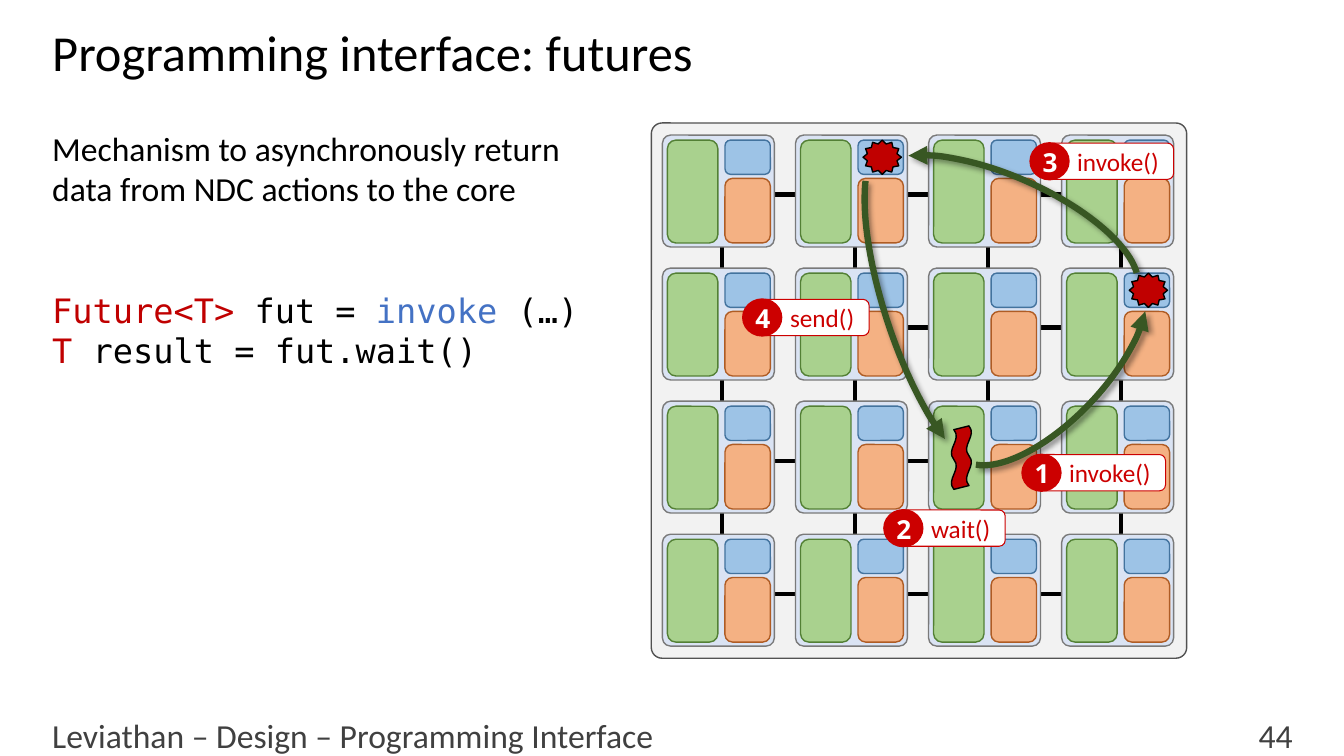
from dataclasses import dataclass
from typing import NamedTuple

from lxml import etree
from pptx import Presentation
from pptx.dml.color import RGBColor
from pptx.enum.shapes import MSO_CONNECTOR, MSO_SHAPE
from pptx.enum.text import MSO_ANCHOR, PP_ALIGN
from pptx.oxml.ns import qn
from pptx.util import Inches, Pt

ROUNDED = MSO_SHAPE.ROUNDED_RECTANGLE
OVAL = MSO_SHAPE.OVAL
ARC = MSO_SHAPE.ARC
STAR = MSO_SHAPE.STAR_12_POINT
WAVE = MSO_SHAPE.DOUBLE_WAVE
STRAIGHT = MSO_CONNECTOR.STRAIGHT
LEFT, CENTER, RIGHT = PP_ALIGN.LEFT, PP_ALIGN.CENTER, PP_ALIGN.RIGHT
TOP, MIDDLE = MSO_ANCHOR.TOP, MSO_ANCHOR.MIDDLE

COLORS = {
    "black": "000000", "white": "FFFFFF", "gray": "404040",
    "panel": "F2F2F2", "panel_line": "525252",
    "tile": "DAE3F3", "tile_line": "7A7A7A",
    "orange": "F4B183", "orange_line": "AF5C24",
    "green": "A9D18E", "green_line": "538035",
    "light_blue": "9DC3E6", "light_blue_line": "43739E",
    "arrow": "385723", "red": "C00000", "callout": "CC0000", "blue": "4472C4",
}
BODY_FONT, CODE_FONT, BADGE_FONT = "Calibri", "DejaVu Sans Mono", "Open Sans"
GRID_SIZE = 4
PITCH = 1.32
TILE_LEFT, TILE_TOP = 6.57, 1.34
INSET = 0.13


class Box(NamedTuple):
    left: float
    top: float
    width: float
    height: float

    def moved(self, across: float, down: float) -> "Box":
        return Box(self.left + across, self.top + down, self.width, self.height)

    def lengths(self) -> list:
        return [Inches(value) for value in self]


class Run(NamedTuple):
    text: str
    color: str = "black"


@dataclass
class Style:
    size: float
    color: str = "black"
    font: str = BODY_FONT
    bold: bool = False
    align: PP_ALIGN = LEFT


@dataclass
class Part:
    box: Box
    fill: str
    line: str
    adjustments: tuple = ()
    kind: MSO_SHAPE = ROUNDED
    rotation: float = 0


@dataclass
class Arrow:
    box: Box
    rotation: float
    start: float
    end: float


@dataclass
class Callout:
    number: str
    label: str
    left: float
    top: float
    width: float


TILE_PARTS = [
    Part(Box(0, 0, 1.11, 1.11), "tile", "tile_line", (0.073,)),
    Part(Box(0.62, 0.43, 0.45, 0.64), "orange", "orange_line"),
    Part(Box(0.05, 0.05, 0.5, 1.02), "green", "green_line"),
    Part(Box(0.62, 0.05, 0.45, 0.34), "light_blue", "light_blue_line"),
]
ARROWS = [
    Arrow(Box(9.85, 2.33, 1.12, 2.56), 43.4, 172.73, 49.65),
    Arrow(Box(9.39, 0.88, 1.13, 2.87), 293.8, 171.26, 49.65),
    Arrow(Box(8.78, 1.34, 1.05, 3.4), 161.7, 171.26, 46.94),
]
CALLOUTS = [
    Callout("2", "wait()", 8.94, 5.06, 1.03),
    Callout("1", "invoke()", 10.31, 4.51, 1.25),
    Callout("3", "invoke()", 10.39, 1.42, 1.25),
    Callout("4", "send()", 7.54, 2.97, 1.08),
]
MARKERS = [
    Part(Box(11.2, 2.71, 0.38, 0.34), "red", "black", (0.4,), STAR),
    Part(Box(8.56, 1.39, 0.38, 0.34), "red", "black", (0.4,), STAR),
    Part(Box(9.22, 4.44, 0.63, 0.2), "red", "black", (0.125, 0.03), WAVE, 90),
]


def rgb(name: str) -> RGBColor:
    return RGBColor.from_string(COLORS[name])


def write_paragraph(paragraph, runs: list, style: Style) -> None:
    paragraph.alignment = style.align
    paragraph.font.name = style.font
    paragraph.font.size = Pt(style.size)
    paragraph.font.bold = style.bold
    if len(runs) == 1:
        paragraph.font.color.rgb = rgb(style.color)
    for part in runs:
        run = paragraph.add_run()
        run.text = part.text
        if len(runs) > 1:
            run.font.color.rgb = rgb(part.color)


def set_insets(frame, inset: float) -> None:
    frame.margin_left = frame.margin_right = Inches(inset)
    frame.margin_top = frame.margin_bottom = Inches(inset)


def add_text(shapes, box: Box, text: str, style: Style, anchor: MSO_ANCHOR = MIDDLE):
    frame = shapes.add_textbox(*box.lengths()).text_frame
    frame.word_wrap = True
    frame.vertical_anchor = anchor
    write_paragraph(frame.paragraphs[0], [Run(text)], style)
    return frame


def add_part(shapes, part: Part, across: float = 0, down: float = 0, width: float = 1):
    shape = shapes.add_shape(part.kind, *part.box.moved(across, down).lengths())
    shape.shadow.inherit = False
    shape.rotation = part.rotation
    for index, value in enumerate(part.adjustments):
        shape.adjustments[index] = value
    shape.fill.solid()
    shape.fill.fore_color.rgb = rgb(part.fill)
    shape.line.color.rgb = rgb(part.line)
    shape.line.width = Pt(width)
    return shape


def add_link(shapes, left: float, top: float, right: float, bottom: float) -> None:
    link = shapes.add_connector(STRAIGHT, *map(Inches, (left, top, right, bottom)))
    link.line.color.rgb = rgb("black")
    link.line.width = Pt(3)
    etree.SubElement(link._element.spPr, qn("a:effectLst"))


def add_mesh(shapes) -> None:
    add_part(shapes, Part(Box(6.46, 1.22, 5.31, 5.31), "panel", "panel_line", (0.02,)))
    steps = [index * PITCH for index in range(GRID_SIZE)]
    for step in steps:
        add_link(shapes, 7.16 + step, 1.77, 7.16 + step, 6.17)
    for step in steps:
        add_link(shapes, 7.05, 1.93 + step, 11.39, 1.93 + step)
    for down in steps:
        for across in steps:
            for part in TILE_PARTS:
                add_part(shapes, part, TILE_LEFT + across, TILE_TOP + down)


def add_arrow(shapes, arrow: Arrow) -> None:
    shape = shapes.add_shape(ARC, *arrow.box.lengths())
    shape.rotation = arrow.rotation
    shape.adjustments[0] = arrow.start
    shape.adjustments[1] = arrow.end
    shape.fill.background()
    shape.line.color.rgb = rgb("arrow")
    shape.line.width = Pt(4.5)
    etree.SubElement(shape.line._get_or_add_ln(), qn("a:headEnd"), type="triangle")
    shape.shadow.inherit = False
    effects = shape._element.spPr.find(qn("a:effectLst"))
    shadow = etree.SubElement(effects, qn("a:outerShdw"), blurRad=str(Pt(4)),
                              dist=str(Pt(3)), dir="2700000", algn="tl", rotWithShape="0")
    color = etree.SubElement(shadow, qn("a:srgbClr"), val=COLORS["black"])
    etree.SubElement(color, qn("a:alpha"), val="40000")


def add_callout(shapes, callout: Callout) -> None:
    left, top = callout.left, callout.top
    label = Part(Box(left, top, callout.width, 0.36), "white", "callout", (0.167,))
    frame = add_part(shapes, label, width=0.75).text_frame
    set_insets(frame, INSET)
    frame.vertical_anchor = MIDDLE
    write_paragraph(frame.paragraphs[0], [Run(callout.label)],
                    Style(18, "callout", align=RIGHT))
    badge = Part(Box(left - 0.18, top - 0.01, 0.4, 0.38), "callout", "callout", kind=OVAL)
    add_part(shapes, badge).line.fill.background()
    number = add_text(shapes, Box(left - 0.2, top - 0.1, 0.45, 0.58), callout.number,
                      Style(18.7, "white", BADGE_FONT, True, CENTER), TOP)
    set_insets(number, INSET)


def add_body(shapes) -> None:
    frame = add_text(shapes, Box(0.42, 1.22, 5.53, 5.26),
                     "Mechanism to asynchronously return data from NDC actions to the core",
                     Style(24), TOP)
    code_lines = [
        [Run("Future<T> ", "red"), Run("fut = "), Run("invoke ", "blue"), Run("(…)")],
        [Run("T", "red"), Run(" result = fut.wait()")],
    ]
    for runs in code_lines:
        write_paragraph(frame.add_paragraph(), runs, Style(24, font=CODE_FONT))
    frame.paragraphs[1].space_before = Pt(58)


def main() -> None:
    presentation = Presentation()
    presentation.slide_width, presentation.slide_height = Inches(13.33), Inches(7.5)
    shapes = presentation.slides.add_slide(presentation.slide_layouts[6]).shapes
    title = add_text(shapes, Box(0.42, 0.12, 12.5, 0.85),
                     "Programming interface: futures", Style(36))
    title.paragraphs[0].line_spacing = 0.9
    add_text(shapes, Box(12.1, 7.09, 0.82, 0.41), "44", Style(24, "gray", align=RIGHT))
    add_text(shapes, Box(0.42, 7.09, 11.36, 0.4),
             "Leviathan – Design – Programming Interface", Style(24, "gray"))
    add_body(shapes)
    add_mesh(shapes.add_group_shape().shapes)
    for arrow in ARROWS:
        add_arrow(shapes, arrow)
    for callout in CALLOUTS:
        add_callout(shapes.add_group_shape().shapes, callout)
    for marker in MARKERS:
        add_part(shapes, marker)
    presentation.save("out.pptx")


if __name__ == "__main__":
    main()
